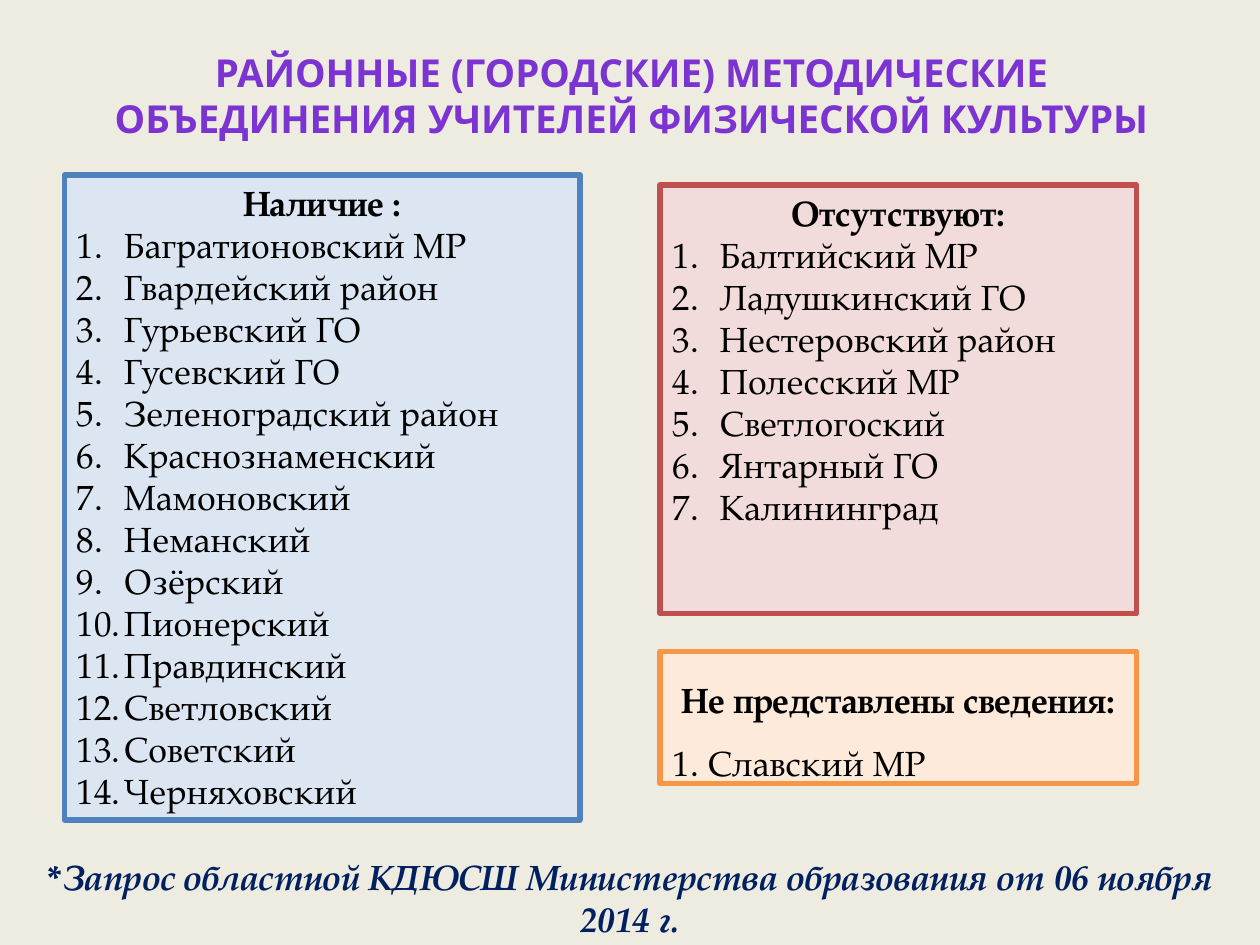
from lxml import etree
from pptx import Presentation
from pptx.dml.color import RGBColor
from pptx.enum import shapes, text
from pptx.oxml import ns
from pptx.util import Cm, Pt

SERIF = "TeX Gyre Pagella"
INDENT = Cm(0.95)
PRESENT = [
    "Багратионовский МР", "Гвардейский район", "Гурьевский ГО", "Гусевский ГО",
    "Зеленоградский район", "Краснознаменский", "Мамоновский", "Неманский",
    "Озёрский", "Пионерский", "Правдинский", "Светловский", "Советский",
    "Черняховский",
]
ABSENT = [
    "Балтийский МР", "Ладушкинский ГО", "Нестеровский район", "Полесский МР",
    "Светлогоский", "Янтарный ГО", "Калининград",
]


def color(value):
    return RGBColor.from_string(value)


def add_span(para, words, size=20, font=SERIF, ink="000000", bold=False, italic=False):
    span = para.add_run()
    span.text = words
    span.font.size = Pt(size)
    span.font.name = font
    span.font.bold = bold
    span.font.italic = italic
    span.font.color.rgb = color(ink)


def number(para):
    """Give the paragraph an automatic number with a hanging indent."""
    props = para._p.get_or_add_pPr()
    props.set("marL", str(INDENT))
    props.set("indent", str(-INDENT))
    etree.SubElement(props, ns.qn("a:buFont"), typeface="+mj-lt")
    etree.SubElement(props, ns.qn("a:buAutoNum"), type="arabicPeriod")


def add_caption(page, area, words, anchor=text.MSO_ANCHOR.TOP, **style):
    box = page.shapes.add_textbox(*map(Cm, area))
    frame = box.text_frame
    frame.word_wrap = True
    frame.vertical_anchor = anchor
    para = frame.paragraphs[0]
    para.alignment = text.PP_ALIGN.CENTER
    add_span(para, words, bold=True, **style)


def add_panel(page, area, fill, line, heading, items, numbered=True, spacing=1.0):
    """Add a framed box with a bold heading above a list."""
    box = page.shapes.add_shape(shapes.MSO_SHAPE.RECTANGLE, *map(Cm, area))
    box.shadow.inherit = False
    box.fill.solid()
    box.fill.fore_color.rgb = color(fill)
    box.line.color.rgb = color(line)
    box.line.width = Pt(3.15)
    frame = box.text_frame
    frame.word_wrap = True
    frame.vertical_anchor = text.MSO_ANCHOR.TOP
    title = frame.paragraphs[0]
    title.alignment = text.PP_ALIGN.CENTER
    title.line_spacing = spacing
    add_span(title, heading, bold=True)
    for item in items:
        para = frame.add_paragraph()
        para.alignment = text.PP_ALIGN.LEFT
        para.line_spacing = spacing
        if numbered:
            number(para)
        add_span(para, item)


def main():
    deck = Presentation()
    deck.slide_width, deck.slide_height = Cm(25.4), Cm(19.05)
    page = deck.slides.add_slide(deck.slide_layouts[6])
    page.background.fill.solid()
    page.background.fill.fore_color.rgb = color("EEECE1")

    add_caption(page, (1.3, 0.53, 22.86, 2.79),
                "РАЙОННЫЕ (ГОРОДСКИЕ) МЕТОДИЧЕСКИЕ ОБЪЕДИНЕНИЯ УЧИТЕЛЕЙ ФИЗИЧЕСКОЙ КУЛЬТУРЫ",
                anchor=text.MSO_ANCHOR.MIDDLE, size=22, font="Noto Sans", ink="7B34D2")
    add_panel(page, (1.3, 3.53, 10.39, 13), "DCE6F2", "4F81BD", "Наличие :", PRESENT)
    add_panel(page, (13.31, 3.73, 9.6, 8.64), "F2DCDB", "C0504D", "Отсутствуют:", ABSENT)
    add_panel(page, (13.31, 13.13, 9.6, 2.67), "FDEADA", "F79646",
              "Не представлены сведения:", ["1. Славский МР"], numbered=False, spacing=1.5)
    add_caption(page, (0, 17.12, 25.4, 1.12),
                "*Запрос областной КДЮСШ Министерства образования от 06 ноября 2014 г.",
                ink="002060", italic=True)
    deck.save("out.pptx")


if __name__ == "__main__":
    main()
